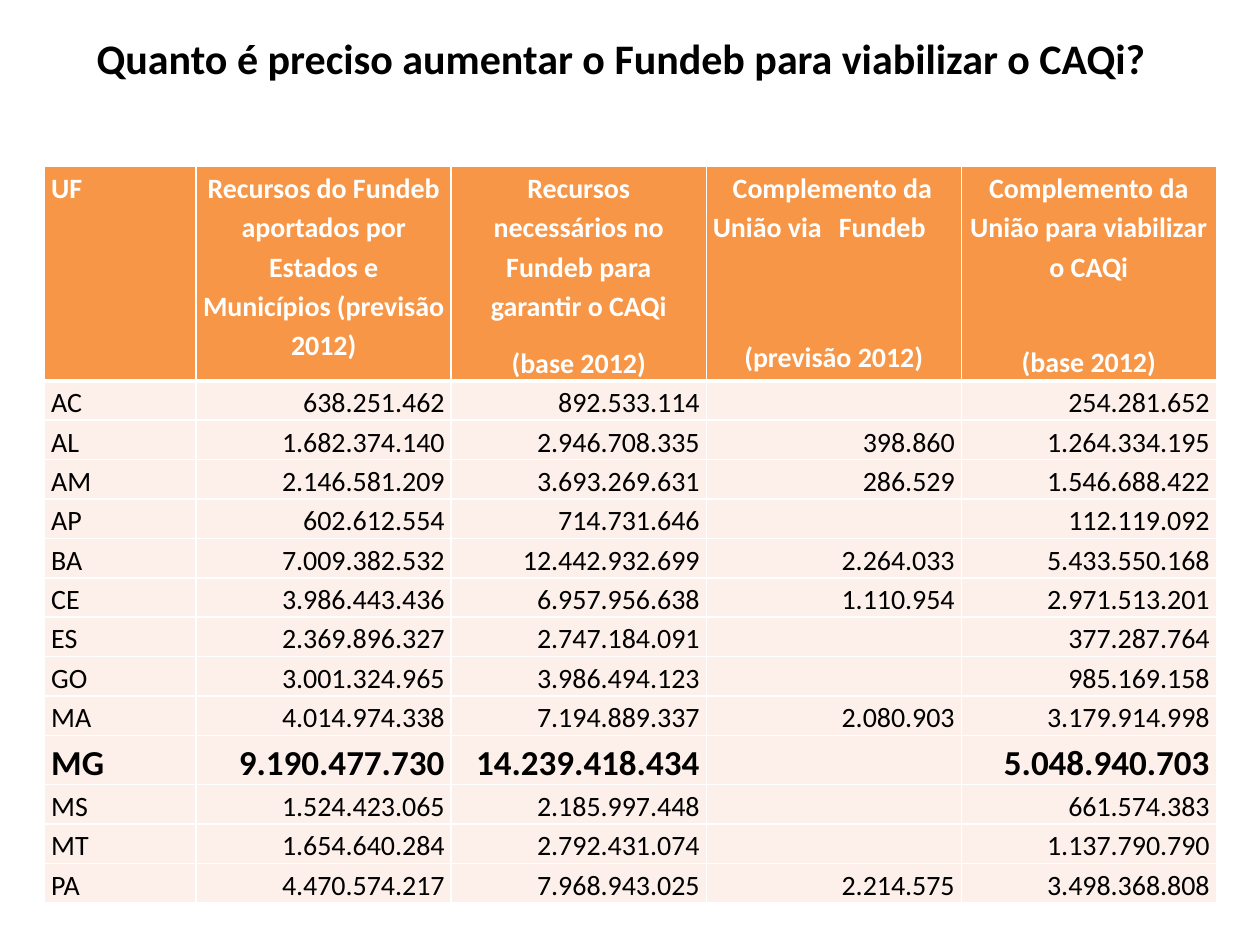
from lxml import etree
from pptx import Presentation
from pptx.dml.color import RGBColor
from pptx.enum.text import MSO_AUTO_SIZE, PP_ALIGN
from pptx.oxml.ns import qn
from pptx.util import Pt

LEFT, CENTER, RIGHT = PP_ALIGN.LEFT, PP_ALIGN.CENTER, PP_ALIGN.RIGHT
BLACK = RGBColor(0x00, 0x00, 0x00)
WHITE = RGBColor(0xFF, 0xFF, 0xFF)
ORANGE = RGBColor(0xF7, 0x96, 0x46)
PEACH = RGBColor(0xFD, 0xEF, 0xE9)
FONT = "Calibri"
HIGHLIGHT = "MG"

# Each header: paragraphs of (text, space before)
HEADERS = [
    [("UF", 0)],
    [("Recursos do Fundeb aportados por Estados e Municípios (previsão 2012)", 0)],
    [("Recursos necessários no Fundeb para garantir o CAQi", 0), ("(base 2012)", 0)],
    [("Complemento da União via\tFundeb", 0), ("(previsão 2012)", 41.5)],
    [("Complemento da União para viabilizar o CAQi", 0), ("(base 2012)", 22)],
]
STATES = [
    ("AC", "638.251.462", "892.533.114", "", "254.281.652"),
    ("AL", "1.682.374.140", "2.946.708.335", "398.860", "1.264.334.195"),
    ("AM", "2.146.581.209", "3.693.269.631", "286.529", "1.546.688.422"),
    ("AP", "602.612.554", "714.731.646", "", "112.119.092"),
    ("BA", "7.009.382.532", "12.442.932.699", "2.264.033", "5.433.550.168"),
    ("CE", "3.986.443.436", "6.957.956.638", "1.110.954", "2.971.513.201"),
    ("ES", "2.369.896.327", "2.747.184.091", "", "377.287.764"),
    ("GO", "3.001.324.965", "3.986.494.123", "", "985.169.158"),
    ("MA", "4.014.974.338", "7.194.889.337", "2.080.903", "3.179.914.998"),
    ("MG", "9.190.477.730", "14.239.418.434", "", "5.048.940.703"),
    ("MS", "1.524.423.065", "2.185.997.448", "", "661.574.383"),
    ("MT", "1.654.640.284", "2.792.431.074", "", "1.137.790.790"),
    ("PA", "4.470.574.217", "7.968.943.025", "2.214.575", "3.498.368.808"),
]


def add_text(paragraph, text, size, color, bold):
    run = paragraph.add_run()
    run.text = text
    run.font.name = FONT
    run.font.size = Pt(size)
    run.font.bold = bold
    run.font.color.rgb = color


def format_cell(cell, fill, top, bottom):
    cell.margin_left = cell.margin_right = Pt(3.75)
    cell.margin_top = cell.margin_bottom = 0
    properties = cell._tc.get_or_add_tcPr()
    for side, width in (("L", 1), ("R", 1), ("T", top), ("B", bottom)):
        line = etree.SubElement(properties, qn(f"a:ln{side}"), w=str(Pt(width)))
        solid = etree.SubElement(line, qn("a:solidFill"))
        etree.SubElement(solid, qn("a:srgbClr"), val=str(WHITE))
    cell.fill.solid()
    cell.fill.fore_color.rgb = fill


prs = Presentation()
prs.slide_width, prs.slide_height = Pt(720), Pt(540)
slide = prs.slides.add_slide(prs.slide_layouts[6])

# Funding table
frame = slide.shapes.add_table(len(STATES) + 1, len(HEADERS),
                               Pt(25.5), Pt(95.2), Pt(669.6), Pt(413))
funding = frame.table
funding.horz_banding = False
for index, column in enumerate(funding.columns):
    column.width = Pt(145.75 if index else 86.6)

# Header row
funding.rows[0].height = Pt(119.7)
for index, parts in enumerate(HEADERS):
    cell = funding.cell(0, index)
    format_cell(cell, ORANGE, 1, 3)
    for number, (text, before) in enumerate(parts):
        text_frame = cell.text_frame
        paragraph = text_frame.add_paragraph() if number else text_frame.paragraphs[0]
        paragraph.alignment = CENTER if index else LEFT
        paragraph.line_spacing = 1.15
        paragraph.space_before = Pt(before)
        paragraph.space_after = Pt(10)
        if "\t" in text:
            # First line indented, second line spread by a tab stop
            paragraph.alignment = LEFT
            indents = paragraph._p.get_or_add_pPr()
            indents.set("marL", "0")
            indents.set("indent", str(Pt(11.4)))
            stops = etree.SubElement(indents, qn("a:tabLst"))
            etree.SubElement(stops, qn("a:tab"), pos=str(Pt(86.5)), algn="l")
        add_text(paragraph, text, 16, WHITE, True)

# State rows
for row, values in enumerate(STATES, start=1):
    bold = values[0] == HIGHLIGHT
    size = 20 if bold else 16
    funding.rows[row].height = Pt(27.7 if bold else 22.1)
    for index, value in enumerate(values):
        cell = funding.cell(row, index)
        format_cell(cell, PEACH, 3 if row == 1 else 1, 1)
        paragraph = cell.text_frame.paragraphs[0]
        paragraph.alignment = RIGHT if index else LEFT
        paragraph.line_spacing = 1.15
        paragraph.space_after = Pt(10)
        if value:
            add_text(paragraph, value, size, BLACK, bold)
        else:
            # Keeps an empty cell from stretching its row
            etree.SubElement(paragraph._p, qn("a:endParaRPr"), sz="1600")

# Title
title = slide.shapes.add_textbox(Pt(48.2), Pt(15.1), Pt(619.2), Pt(36)).text_frame
title.word_wrap = False
title.auto_size = MSO_AUTO_SIZE.SHAPE_TO_FIT_TEXT
add_text(title.paragraphs[0],
         "Quanto é preciso aumentar o Fundeb para viabilizar o CAQi?", 24, BLACK, True)

prs.save("out.pptx")
